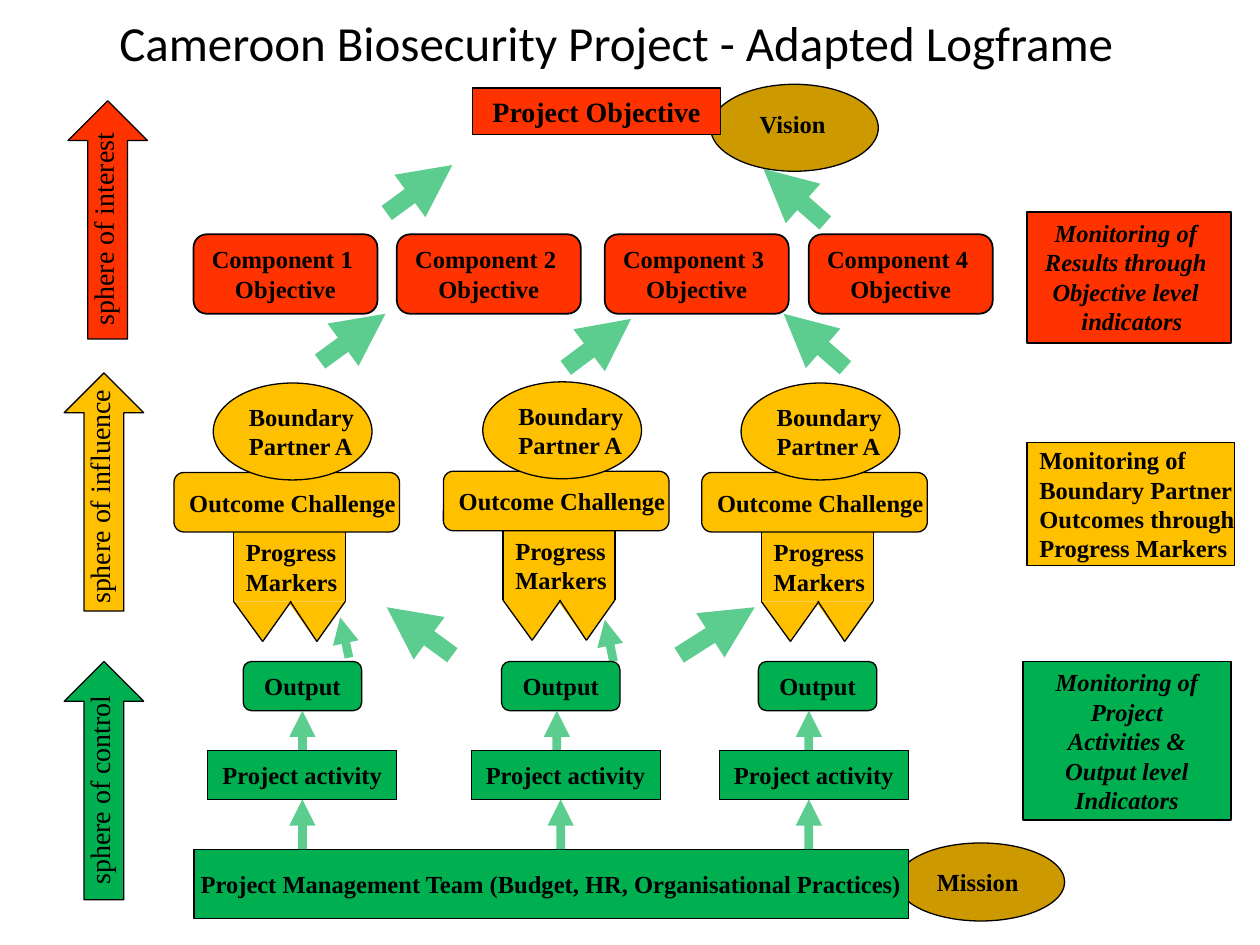
from lxml.etree import SubElement
from pptx import Presentation
from pptx.dml.color import RGBColor
from pptx.enum.shapes import MSO_CONNECTOR, MSO_SHAPE
from pptx.enum.text import MSO_ANCHOR, PP_ALIGN
from pptx.oxml.ns import qn
from pptx.util import Pt

RED = RGBColor(0xFF, 0x33, 0x00)
AMBER = RGBColor(0xFF, 0xC0, 0x00)
GREEN = RGBColor(0x00, 0xB0, 0x50)
OCHRE = RGBColor(0xCC, 0x99, 0x00)
BLACK = RGBColor(0x00, 0x00, 0x00)

SERIF = "Times New Roman"
TOP, BOTTOM = 0, 2  # connection sites


def write_lines(shape, lines, size=14, bold=True, italic=False, font=SERIF,
                align=PP_ALIGN.CENTER, anchor=MSO_ANCHOR.MIDDLE, wrap=False):
    frame = shape.text_frame
    frame.word_wrap = wrap
    frame.vertical_anchor = anchor
    for index, line in enumerate(lines):
        paragraph = frame.add_paragraph() if index else frame.paragraphs[0]
        paragraph.alignment = align
        run = paragraph.add_run()
        run.text = line
        run.font.name = font
        run.font.size = Pt(size)
        run.font.bold = bold
        run.font.italic = italic
        run.font.color.rgb = BLACK


def add_block(slide, kind, left, top, width, height, fill, lines=(),
              line_width=0.75, **text_options):
    shape = slide.shapes.add_shape(kind, Pt(left), Pt(top), Pt(width), Pt(height))
    shape.shadow.inherit = False
    shape.fill.solid()
    shape.fill.fore_color.rgb = fill
    if line_width:
        shape.line.color.rgb = BLACK
        shape.line.width = Pt(line_width)
    else:
        shape.line.fill.background()
    if lines:
        write_lines(shape, lines, **text_options)
    return shape


def add_label(slide, left, top, width, height, text, rotation=0, **text_options):
    box = slide.shapes.add_textbox(Pt(left), Pt(top), Pt(width), Pt(height))
    box.rotation = rotation
    write_lines(box, [text], **text_options)


def add_line(slide, start, end, color=BLACK, width=0.75):
    connector = slide.shapes.add_connector(
        MSO_CONNECTOR.STRAIGHT, Pt(start[0]), Pt(start[1]), Pt(end[0]), Pt(end[1]))
    connector.line.color.rgb = color
    connector.line.width = Pt(width)
    SubElement(connector._element.spPr, qn("a:effectLst"))
    return connector


def add_arrow(slide, start, end, width):
    connector = add_line(slide, start, end, GREEN, width)
    line = connector.line._get_or_add_ln()
    color = line.find(qn("a:solidFill")).find(qn("a:srgbClr"))
    SubElement(color, qn("a:alpha"), val="63000")
    SubElement(line, qn("a:tailEnd"), type="triangle")
    return connector


def add_sphere(slide, left, top, fill, text, text_top, length):
    """Tall block arrow with a label that reads upwards."""
    add_block(slide, MSO_SHAPE.UP_ARROW, left, top, 45.4, 136.1, fill)
    add_label(slide, left + 20 - length / 2, text_top, length, 26.6, text, rotation=270,
              size=16, bold=False, align=PP_ALIGN.LEFT, anchor=MSO_ANCHOR.TOP)


def add_partner(slide, left, top):
    """Boundary partner, its outcome challenge and the progress-marker ribbon."""
    ribbon, ribbon_top, ribbon_end = left + 34, top + 34, top + 73.6
    add_block(slide, MSO_SHAPE.RECTANGLE, ribbon, ribbon_top, 64, 39.6, AMBER,
              ["Progress", "Markers"], line_width=0, align=PP_ALIGN.LEFT)
    add_block(slide, MSO_SHAPE.ROUNDED_RECTANGLE, left, top, 128.9, 34, AMBER,
              ["Outcome Challenge"], align=PP_ALIGN.LEFT)
    for tip_left in (ribbon + 31, ribbon):
        tip = add_block(slide, MSO_SHAPE.ISOSCELES_TRIANGLE, tip_left, ribbon_end,
                        33, 23, AMBER, line_width=0)
        tip.rotation = 180
    # Ribbon outline: two sides, then two notched ends
    for side in (ribbon, ribbon + 64):
        add_line(slide, (side, ribbon_top), (side, ribbon_end))
    for first, point, last in ((0, 16.7, 33), (32.4, 47.7, 64)):
        bottom = (ribbon + point, ribbon_end + 23)
        add_line(slide, (ribbon + first, ribbon_end), bottom)
        add_line(slide, bottom, (ribbon + last, ribbon_end))
    add_block(slide, MSO_SHAPE.OVAL, left + 22.5, top - 51.1, 90.7, 55.4, AMBER,
              ["Boundary", "Partner A"], align=PP_ALIGN.LEFT)


def main():
    presentation = Presentation()
    presentation.slide_width, presentation.slide_height = Pt(720), Pt(540)
    slide = presentation.slides.add_slide(presentation.slide_layouts[6])
    rectangle, rounded = MSO_SHAPE.RECTANGLE, MSO_SHAPE.ROUNDED_RECTANGLE

    add_label(slide, 57.6, -2, 589, 52, "Cameroon Biosecurity Project - Adapted Logframe",
              size=28, bold=False, font="Calibri", wrap=True)

    # Wide arrows between the levels
    for start, end in (
            ((182.9, 206.6), (220.3, 179.3)), ((483.1, 210.2), (447.8, 179.3)),
            ((323.3, 210.2), (360.7, 182.2)), ((258.5, 374.4), (221, 347)),
            ((388.1, 374.4), (431.3, 347)), ((471.6, 127.4), (436.3, 96.5)),
            ((221, 121.7), (258.5, 94.3))):
        add_arrow(slide, start, end, 10)

    # Spheres on the left
    add_sphere(slide, 38.9, 57.6, RED, "sphere of interest", 116.6, 126)
    add_sphere(slide, 36.7, 213.1, AMBER, "sphere of influence", 269.3, 139)
    add_sphere(slide, 36.7, 378, GREEN, "sphere of control", 437, 124.6)

    # Vision, objective and components
    add_block(slide, MSO_SHAPE.OVAL, 406.1, 48.2, 95.8, 49.7, OCHRE)
    add_label(slide, 427, 59, 52.6, 24.5, "Vision",
              align=PP_ALIGN.LEFT, anchor=MSO_ANCHOR.TOP)
    add_block(slide, rectangle, 270, 50.4, 141.8, 26.6, RED, ["Project Objective"],
              line_width=1, size=16, wrap=True)
    for number, left in enumerate((110.6, 226.8, 345.6, 462.2), start=1):
        add_block(slide, rounded, left, 133.9, 105.1, 45.4, RED,
                  [f"Component {number} ", "Objective"], line_width=1,
                  anchor=MSO_ANCHOR.TOP, wrap=True)

    # Boundary partners
    for left, top in ((99.4, 270), (253.4, 269.3), (401, 270)):
        add_partner(slide, left, top)
    for start, end in (((199.4, 375.8), (194.4, 352.8)), ((350.6, 378), (345.6, 354.2))):
        add_arrow(slide, start, end, 5)

    # Mission, management team, activities and outputs
    add_block(slide, MSO_SHAPE.OVAL, 512.6, 481.7, 95.8, 44.6, OCHRE, ["Mission "], wrap=True)
    add_block(slide, rectangle, 110.9, 485.3, 408.2, 39.6, GREEN,
              ["Project Management Team (Budget, HR, Organisational Practices)"])
    for output_left, activity_left, team_x, output_x in (
            (139, 118.8, 172.8, 172.8),
            (286.6, 269.3, 320.4, 318.2),
            (433.4, 411.1, 462.2, 462.2)):
        output = add_block(slide, rounded, output_left, 378, 67.7, 28.1, GREEN, ["Output"])
        activity = add_block(slide, rectangle, activity_left, 428.7, 108, 28.1, GREEN,
                             ["Project activity"])
        from_team = add_arrow(slide, (team_x, 485.3), (team_x, 456.8), 5)
        to_output = add_arrow(slide, (output_x, 428.7), (output_x, 406.1), 5)
        # Only the first column's arrows meet the middle of the sides
        if activity_left + 54 == team_x:
            from_team.end_connect(activity, BOTTOM)
            to_output.begin_connect(activity, TOP)
            to_output.end_connect(output, BOTTOM)

    # Monitoring notes on the right
    add_block(slide, rectangle, 586.8, 121, 116.6, 74.9, RED,
              ["Monitoring of ", "Results through ", "Objective level ", " indicators"],
              line_width=1, italic=True, anchor=MSO_ANCHOR.TOP, wrap=True)
    add_block(slide, rectangle, 586.8, 252.7, 118.8, 70.6, AMBER,
              ["Monitoring of", "Boundary Partner", "Outcomes through", "Progress Markers"],
              align=PP_ALIGN.LEFT)
    add_block(slide, rectangle, 584.6, 378, 118.8, 90.7, GREEN,
              ["Monitoring of", "Project", "Activities &", "Output level", "Indicators"],
              italic=True)

    presentation.save("out.pptx")


if __name__ == "__main__":
    main()
